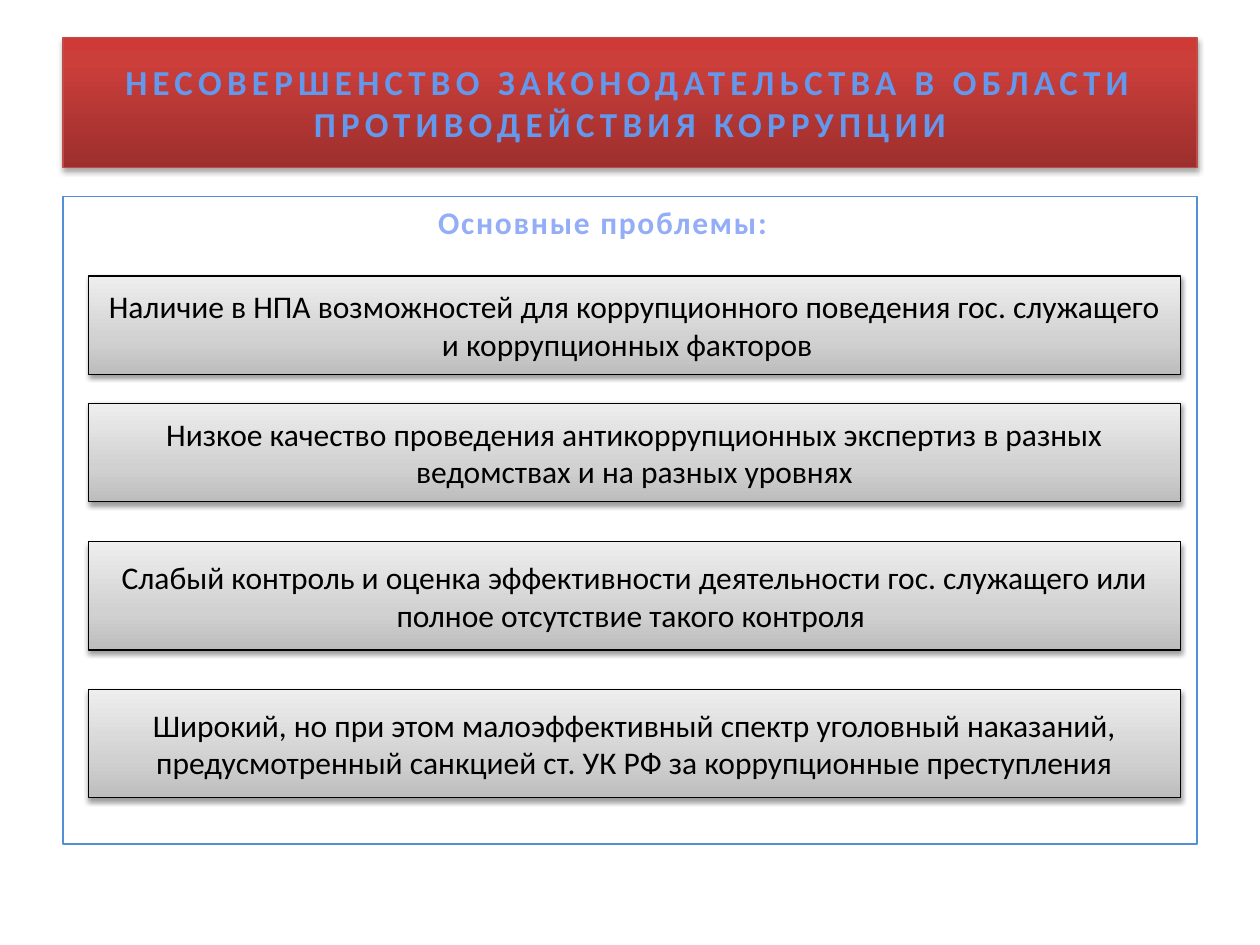
from lxml import etree
from pptx import Presentation
from pptx.dml.color import RGBColor
from pptx.enum.shapes import MSO_SHAPE
from pptx.enum.text import MSO_ANCHOR, PP_ALIGN
from pptx.oxml.ns import qn
from pptx.util import Inches, Pt

RECTANGLE = MSO_SHAPE.RECTANGLE
TOP, MIDDLE = MSO_ANCHOR.TOP, MSO_ANCHOR.MIDDLE
LEFT, CENTER = PP_ALIGN.LEFT, PP_ALIGN.CENTER

BLACK = RGBColor(0x00, 0x00, 0x00)
TITLE_BLUE = RGBColor(0x63, 0x98, 0xED)
HEADING_BLUE = RGBColor(0x93, 0xAE, 0xF7)
PANEL_LINE = RGBColor(0x55, 0x8E, 0xD5)
TITLE_LINE = RGBColor(0xBF, 0x4C, 0x48)
FONT = "Calibri"

# Gradient stops run from bottom to top: (percent, colour)
RED_STOPS = [(0, "9C2F2D"), (80, "CB3E3A"), (100, "CE3B37")]
GREY_STOPS = [(0, "BDBDBD"), (35, "D1D1D1"), (100, "EEEEEE")]

TITLE = "НЕСОВЕРШЕНСТВО ЗАКОНОДАТЕЛЬСТВА В ОБЛАСТИ ПРОТИВОДЕЙСТВИЯ КОРРУПЦИИ"
HEADING = "Основные проблемы:"
# (top, height, text)
PROBLEMS = [
    (2.19, 0.78, "Наличие в НПА возможностей для коррупционного поведения "
                 "гос. служащего и коррупционных факторов  "),
    (3.2, 0.78, "Низкое качество проведения антикоррупционных экспертиз "
                "в разных ведомствах и на разных уровнях"),
    (4.3, 0.86, "Слабый контроль и оценка эффективности деятельности "
                "гос. служащего или полное отсутствие такого контроля "),
    (5.47, 0.86, "Широкий, но при этом малоэффективный спектр уголовный наказаний, "
                 "предусмотренный санкцией ст. УК РФ за коррупционные преступления"),
]


def place(shape, left, top, width, height):
    shape.left, shape.top = Inches(left), Inches(top)
    shape.width, shape.height = Inches(width), Inches(height)


def add_shadow(effects, opacity, blur, distance):
    """Put a black shadow falling straight down into an effect list."""
    shadow = etree.SubElement(effects, qn("a:outerShdw"), blurRad=str(Pt(blur)),
                              dist=str(Pt(distance)), dir="5400000", rotWithShape="0")
    colour = etree.SubElement(shadow, qn("a:srgbClr"), val="000000")
    etree.SubElement(colour, qn("a:alpha"), val=str(opacity * 1000))


def style_block(shape, stops, line_colour, opacity, distance):
    """Give a shape a vertical gradient, a thin line and a shadow."""
    shape.fill.gradient()
    shape.fill.gradient_angle = 90
    stop_list = shape._element.spPr.find(".//" + qn("a:gsLst"))
    for stop in list(stop_list):
        stop_list.remove(stop)
    for percent, colour in stops:
        stop = etree.SubElement(stop_list, qn("a:gs"), pos=str(percent * 1000))
        etree.SubElement(stop, qn("a:srgbClr"), val=colour)
    shape.line.color.rgb = line_colour
    shape.line.width = Pt(0.75)
    shape.shadow.inherit = False
    add_shadow(shape._element.spPr.find(qn("a:effectLst")), opacity, 3.1, distance)


def write(shape, text, size, colour, align=CENTER, anchor=MIDDLE, bold=False, spacing=0):
    frame = shape.text_frame
    frame.word_wrap = True
    frame.vertical_anchor = anchor
    para = frame.paragraphs[0]
    para.alignment = align
    span = para.add_run()
    span.text = text
    span.font.name, span.font.size, span.font.bold = FONT, Pt(size), bold
    span.font.color.rgb = colour
    if spacing:
        span._r.get_or_add_rPr().set("spc", str(spacing * 100))
    return para, span


deck = Presentation()
deck.slide_width, deck.slide_height = Inches(10), Inches(7.5)
page = deck.slides.add_slide(deck.slide_layouts[5])

title = page.shapes.title
place(title, 0.5, 0.3, 9, 1.03)
style_block(title, RED_STOPS, TITLE_LINE, 35, 1.8)
_, title_span = write(title, TITLE, 20, TITLE_BLUE, bold=True, spacing=3)
text_effects = etree.Element(qn("a:effectLst"))
add_shadow(text_effects, 35, 2, 1)
title_span._r.rPr.find(qn("a:solidFill")).addnext(text_effects)

panel = page.shapes.add_shape(RECTANGLE, 0, 0, 0, 0)
place(panel, 0.5, 1.56, 9, 5.14)
panel.shadow.inherit = False
panel.fill.background()
panel.line.color.rgb = PANEL_LINE
panel.line.width = Pt(0.75)
heading, _ = write(panel, HEADING, 18, HEADING_BLUE, LEFT, TOP, bold=True, spacing=1)
heading.space_before = Pt(3.6)
heading._p.get_or_add_pPr().set("marL", str(Inches(2.88)))

for top, height, text in PROBLEMS:
    box = page.shapes.add_shape(RECTANGLE, 0, 0, 0, 0)
    place(box, 0.7, top, 8.67, height)
    style_block(box, GREY_STOPS, BLACK, 38, 1.6)
    write(box, text, 18, BLACK)

deck.save("out.pptx")
